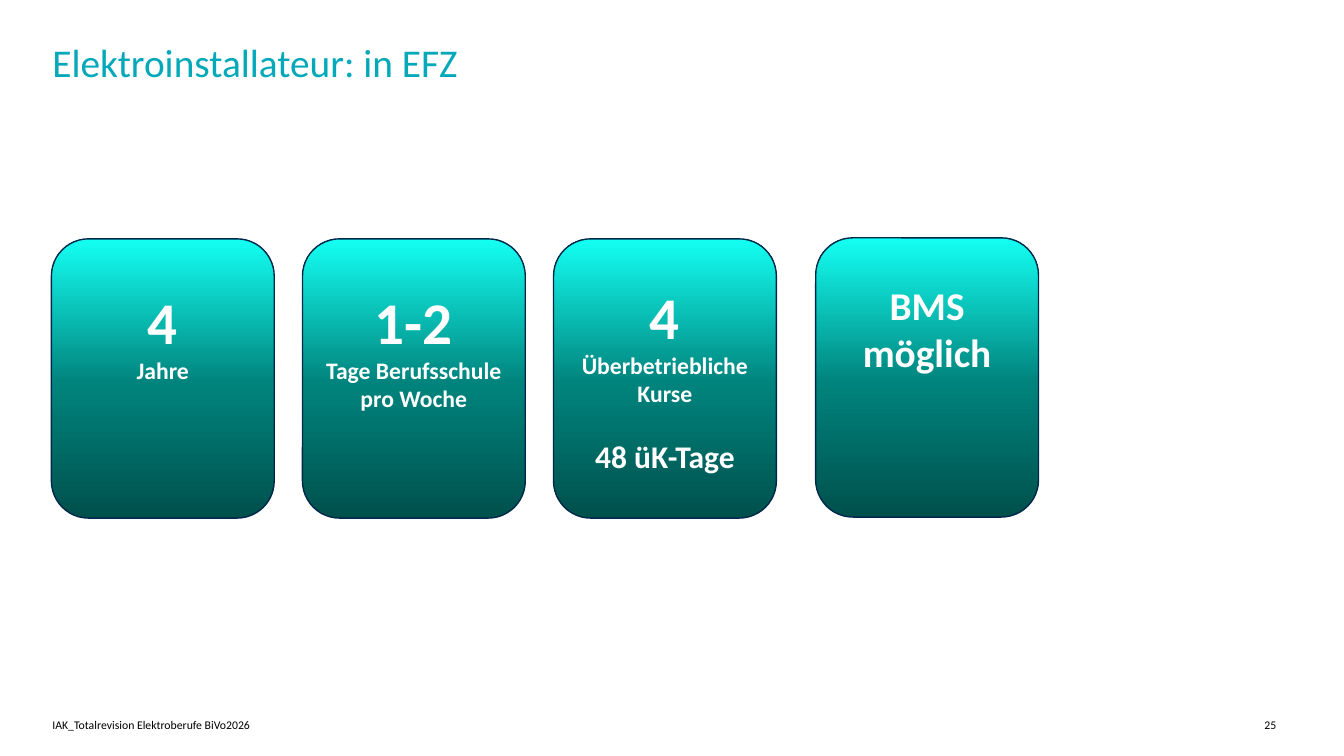
import copy
import pptx
import pptx.util
import pptx.dml.color
import pptx.enum.shapes
import pptx.enum.text
import pptx.oxml.ns

Inches, Pt = pptx.util.Inches, pptx.util.Pt
RGBColor = pptx.dml.color.RGBColor
Anchor = pptx.enum.text.MSO_ANCHOR
Align = pptx.enum.text.PP_ALIGN

# Content
TITLE = "Elektroinstallateur: in EFZ"
FOOTER = "IAK_Totalrevision Elektroberufe BiVo2026"
PAGE_NUMBER = "25"
# Each card: text inset at the top, then (text, size, space before)
CARDS = [
    (0.35, [("4", 42.2, 0), ("Jahre", 16.9, 0)]),
    (0.35, [("1-2", 42.2, 0), ("Tage Berufsschule pro Woche", 16.9, 0)]),
    (0.3, [("4", 42.2, 0), ("Überbetriebliche Kurse", 16.9, 0),
           ("48 üK-Tage", 22.5, 20.6)]),
    (0.32, [("BMS\vmöglich", 28.1, 0)]),
]

# Style
FONT = "Calibri"
TEAL = RGBColor(0x03, 0xA9, 0xB9)
BLACK = RGBColor(0, 0, 0)
WHITE = RGBColor(0xFF, 0xFF, 0xFF)
NAVY = RGBColor(0x00, 0x28, 0x4A)
GRADIENT = [(0, RGBColor(0x00, 0x50, 0x4C)),
            (0.48, RGBColor(0x00, 0x83, 0x7C)),
            (1, RGBColor(0x14, 0xFF, 0xF3))]

# Grid in inches
WIDTH, HEIGHT = 13.33, 7.5
MARGIN = 0.52
CARD_LEFT, CARD_TOP, CARD_WIDTH, CARD_HEIGHT = 0.51, 2.37, 2.21, 2.77
CARD_PITCH = 2.49
LAST_SHIFT = (0.11, -0.01)


def write(shape, lines, color, bold=False, align=Align.LEFT,
          anchor=Anchor.TOP, insets=(0, 0, 0, 0), leading=None):
    frame = shape.text_frame
    frame.word_wrap = True
    frame.auto_size = pptx.enum.text.MSO_AUTO_SIZE.NONE
    frame.vertical_anchor = anchor
    (frame.margin_left, frame.margin_top,
     frame.margin_right, frame.margin_bottom) = map(Inches, insets)
    for index, (text, size, before) in enumerate(lines):
        para = frame.add_paragraph() if index else frame.paragraphs[0]
        para.text = text
        para.alignment = align
        para.space_before = Pt(before)
        if leading:
            para.line_spacing = Pt(leading)
        for span in para.runs:
            span.font.name, span.font.size = FONT, Pt(size)
            span.font.bold = bold
            span.font.color.rgb = color


def fill_gradient(shape):
    shape.fill.gradient()
    shape.fill.gradient_angle = 90
    stop_list = shape._element.spPr.find(".//" + pptx.oxml.ns.qn("a:gsLst"))
    stop_list.append(copy.deepcopy(stop_list[-1]))
    for stop, (position, color) in zip(shape.fill.gradient_stops, GRADIENT):
        stop.position = position
        stop.color.rgb = color


deck = pptx.Presentation()
deck.slide_width, deck.slide_height = Inches(WIDTH), Inches(HEIGHT)
page = deck.slides.add_slide(deck.slide_layouts[5])

# Title
title = page.shapes.title
title.left, title.top = Inches(MARGIN), Inches(0.43)
title.width, title.height = Inches(12.35), Inches(0.83)
write(title, [(TITLE, 28.1, 0)], TEAL, leading=30.2)

# Footer and page number
for text, left, width in [(FOOTER, MARGIN, 8.93), (PAGE_NUMBER, 12.54, 0.33)]:
    box = page.shapes.add_textbox(Inches(left), Inches(7.07),
                                  Inches(width), Inches(0.14))
    write(box, [(text, 8.4, 0)], BLACK, anchor=Anchor.MIDDLE, leading=18)

# Cards, the last one set slightly apart
for column, (inset, lines) in enumerate(CARDS):
    shift_x, shift_y = LAST_SHIFT if column == len(CARDS) - 1 else (0, 0)
    card = page.shapes.add_shape(
        pptx.enum.shapes.MSO_SHAPE.ROUNDED_RECTANGLE,
        Inches(CARD_LEFT + column * CARD_PITCH + shift_x),
        Inches(CARD_TOP + shift_y), Inches(CARD_WIDTH), Inches(CARD_HEIGHT))
    card.shadow.inherit = False
    fill_gradient(card)
    card.line.color.rgb = NAVY
    card.line.width = Pt(1)
    write(card, lines, WHITE, bold=True, align=Align.CENTER,
          insets=(0.03, inset, 0.03, 0.05))

deck.save("out.pptx")
